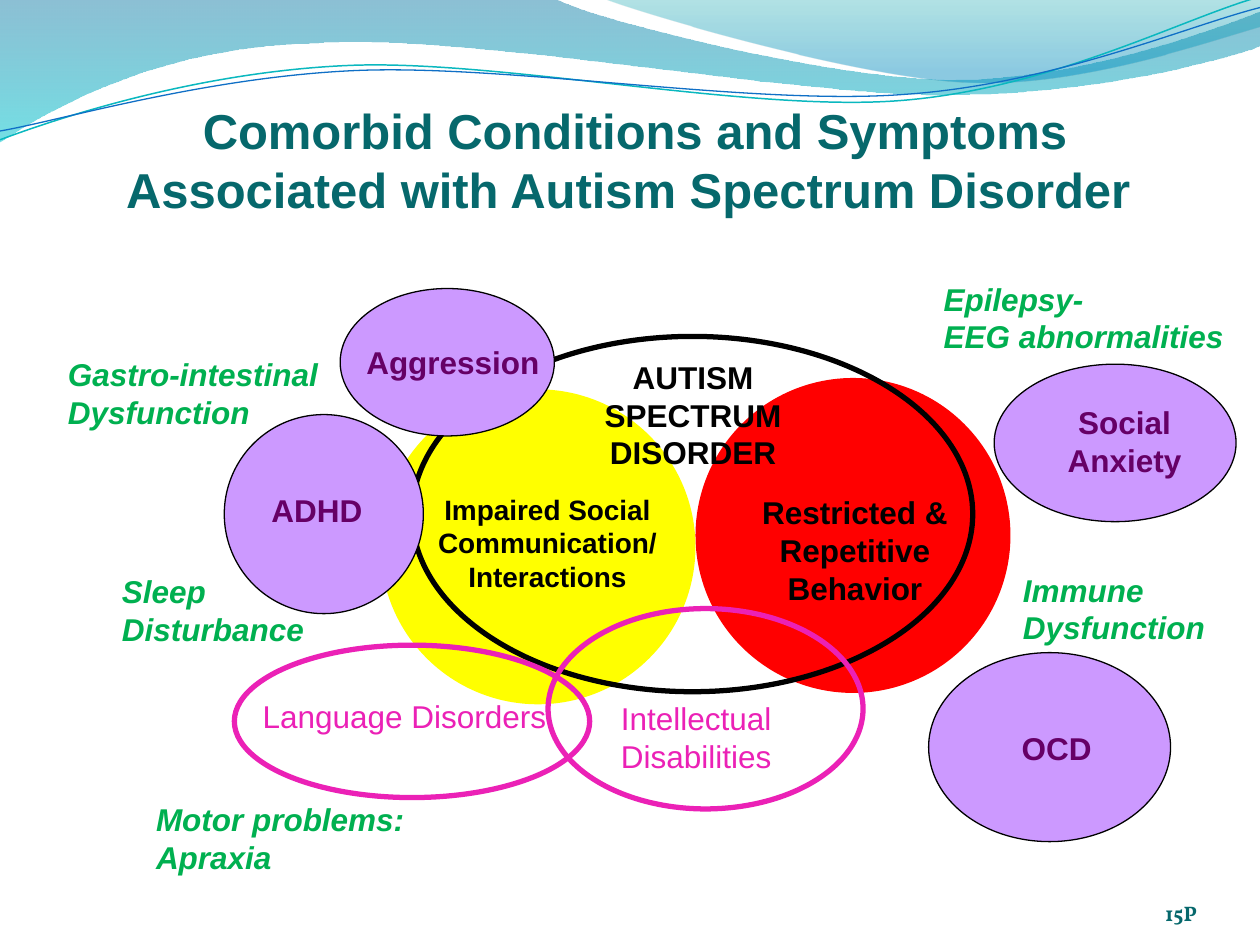
from lxml import etree
from pptx import Presentation
from pptx.dml.color import RGBColor
from pptx.enum.shapes import MSO_SHAPE
from pptx.enum.text import MSO_ANCHOR, MSO_AUTO_SIZE, PP_ALIGN
from pptx.oxml.ns import qn
from pptx.util import Inches, Pt

OVAL = MSO_SHAPE.OVAL
LEFT, CENTER, RIGHT = PP_ALIGN.LEFT, PP_ALIGN.CENTER, PP_ALIGN.RIGHT
TOP, MIDDLE, BOTTOM = MSO_ANCHOR.TOP, MSO_ANCHOR.MIDDLE, MSO_ANCHOR.BOTTOM

BLACK = RGBColor(0x00, 0x00, 0x00)
WHITE = RGBColor(0xFF, 0xFF, 0xFF)
RED = RGBColor(0xFF, 0x00, 0x00)
YELLOW = RGBColor(0xFF, 0xFF, 0x00)
PINK = RGBColor(0xEB, 0x21, 0xB6)
LILAC = RGBColor(0xCC, 0x99, 0xFF)
PURPLE = RGBColor(0x66, 0x00, 0x66)
GREEN = RGBColor(0x00, 0xB0, 0x50)
TEAL = RGBColor(0x06, 0x68, 0x6C)
DEEP_BLUE = RGBColor(0x00, 0x74, 0xA1)
AQUA = RGBColor(0x00, 0xC6, 0xCF)
SEA = RGBColor(0x00, 0xA1, 0xA9)
SKY = RGBColor(0x00, 0x8B, 0xBF)
LINE_AQUA = RGBColor(0x0A, 0xB8, 0xBF)
LINE_BLUE = RGBColor(0x0F, 0x6F, 0xC6)

# Content: a path is a start point, then points (2 numbers) or Bezier curves (6)
TITLE = ("Comorbid Conditions and Symptoms "
         "Associated with Autism Spectrum Disorder ")
WAVES = [  # path, gradient stops as (position, colour, opacity %)
    ([(0, 0), (4.4, -0.01), (4.76, 0.17, 6.64, 0.63, 7.58, 0.63),
      (8.53, 0.63, 9.58, 0.26, 10, 0.09), (10.01, 0.36),
      (9.83, 0.44, 8.7, 0.76, 7.46, 0.75), (6.22, 0.75, 3.82, 0.28, 2.57, 0.34),
      (1.29, 0.36, 0.46, 0.83, -0.01, 1.13), (0, 0)],
     [(0, DEEP_BLUE, 45), (1, AQUA, 55)]),
    ([(4.79, -0.01), (5.09, 0.11, 6.82, 0.62, 7.69, 0.65),
      (8.56, 0.69, 9.61, 0.32, 10, 0.21), (10, 0), (4.79, -0.01)],
     [(0, SEA, 30), (0.8, SKY, 45)]),
]
RIPPLES = [  # path, colour, width
    ([(0, 1.11), (0.48, 0.93, 1.58, 0.57, 2.77, 0.52),
      (3.95, 0.47, 5.93, 0.89, 7.13, 0.8), (8.33, 0.71, 9.38, 0.15, 9.98, -0.02)],
     LINE_AQUA, 0.85),
    ([(0, 1.04), (0.47, 0.96, 1.64, 0.61, 2.83, 0.56),
      (4.03, 0.51, 5.97, 0.84, 7.17, 0.75), (8.36, 0.67, 9.41, 0.21, 10, 0.06)],
     LINE_BLUE, 0.75),
]

# Formats shared by each family of labels
CORE = dict(color=BLACK, bold=True, align=CENTER)
RELATED = dict(color=PINK, align=CENTER)
COMORBID = dict(color=PURPLE, bold=True, align=CENTER)
MEDICAL = dict(color=GREEN, bold=True, italic=True)
THIN, THICK = 0.75, 3

# Back to front: (oval area, fill, line colour, line width) or (text, area, format)
DIAGRAM = [
    ("15P", (8.67, 6.95, 0.83, 0.4),
     dict(color=TEAL, bold=True, size=12, font="Vollkorn", align=RIGHT,
          anchor=BOTTOM, inset=0)),
    ((5.52, 3, 2.5, 2.5), RED, None, 0),
    ((3.02, 3.09, 2.5, 2.5), YELLOW, None, 0),
    ("Restricted & Repetitive Behavior", (5.64, 3.86, 2.29, 1.01),
     dict(CORE, anchor=MIDDLE)),
    ("Impaired Social Communication/\nInteractions", (2.97, 3.85, 2.75, 0.91),
     dict(CORE, anchor=MIDDLE, size=16)),
    ((3.27, 2.67, 4.45, 2.82), None, BLACK, THICK),
    ("AUTISM\nSPECTRUM\nDISORDER", (4.54, 2.79, 1.92, 0.96), CORE),
    ((1.86, 5.12, 2.82, 1.21), None, PINK, THICK),
    ("Language Disorders", (1.67, 5.48, 3.08, 0.91), RELATED),
    ((4.35, 4.83, 2.5, 1.59), None, PINK, THICK),
    ("Intellectual Disabilities", (4.4, 5.5, 2.25, 0.71), RELATED),
    ((1.78, 3.29, 1.58, 1.58), LILAC, BLACK, THIN),
    ("ADHD", (1.85, 3.85, 1.33, 0.4), COMORBID),
    ((7.89, 2.89, 1.92, 1.25), LILAC, BLACK, THIN),
    ("Social Anxiety", (8.09, 3.15, 1.67, 0.71), COMORBID),
    ((7.37, 5.18, 1.92, 1.5), LILAC, BLACK, THIN),
    ("OCD", (8.01, 5.74, 1.42, 0.4), dict(COMORBID, align=LEFT)),
    ((2.7, 2.29, 1.7, 1.17), LILAC, BLACK, THIN),
    ("Aggression", (2.51, 2.67, 2.17, 0.4), COMORBID),
    ("Epilepsy-\nEEG abnormalities", (7.39, 2.17, 2.61, 0.71),
     dict(MEDICAL, fill=WHITE)),
    ("Motor problems: Apraxia", (1.14, 6.3, 2.5, 0.71), MEDICAL),
    ("Immune Dysfunction", (8.02, 4.48, 1.78, 0.71), MEDICAL),
    ("Gastro-intestinal Dysfunction", (0.44, 2.77, 2.25, 0.71), MEDICAL),
    ("Sleep Disturbance", (0.87, 4.49, 1.77, 0.71), MEDICAL),
]


def write(box, text, color=BLACK, size=18, font="Arial", bold=False, italic=False,
          align=LEFT, anchor=TOP, inset=None, fill=None):
    """Put formatted text into a box, one paragraph a line."""
    frame = box.text_frame
    frame.word_wrap = True
    frame.auto_size = MSO_AUTO_SIZE.NONE
    frame.vertical_anchor = anchor
    if inset is not None:
        frame.margin_left = frame.margin_right = Inches(inset)
        frame.margin_top = frame.margin_bottom = Inches(inset)
    if fill is not None:
        box.fill.solid()
        box.fill.fore_color.rgb = fill
    for index, line in enumerate(text.split("\n")):
        para = frame.add_paragraph() if index else frame.paragraphs[0]
        para.alignment = align
        para.space_before = Pt(0)
        span = para.add_run()
        span.text = line
        span.font.name, span.font.size = font, Pt(size)
        span.font.bold, span.font.italic = bold, italic
        span.font.color.rgb = color


def style(shape, fill, line, width):
    shape.shadow.inherit = False
    if fill is None:
        shape.fill.background()
    else:
        shape.fill.solid()
        shape.fill.fore_color.rgb = fill
    if line is None:
        shape.line.fill.background()
    else:
        shape.line.color.rgb = line
        shape.line.width = Pt(width)


def draw_path(page, path, close):
    """Draw straight legs through all points, then merge threes into curves."""
    points = [(Inches(part[i]), Inches(part[i + 1]))
              for part in path for i in range(0, len(part), 2)]
    builder = page.shapes.build_freeform(*points[0])
    builder.add_line_segments(points[1:], close=close)
    shape = builder.convert_to_shape()
    legs = iter(list(shape._element.spPr.iter(qn("a:lnTo"))))
    for part in path[1:]:
        leg = next(legs)
        if len(part) == 6:
            curve = etree.Element(qn("a:cubicBezTo"))
            leg.addprevious(curve)
            for old in (leg, next(legs), next(legs)):
                curve.append(old[0])
                old.getparent().remove(old)
    return shape


def draw_wave(page, path, stops):
    shape = draw_path(page, path, True)
    style(shape, None, None, 0)
    shape.fill.gradient()
    shape.fill.gradient_angle = 270
    for stop, (position, color, _) in zip(shape.fill.gradient_stops, stops):
        stop.position = position
        stop.color.rgb = color
    colors = shape._element.spPr.find(qn("a:gradFill")).iter(qn("a:srgbClr"))
    for element, (_, _, opacity) in zip(colors, stops):
        etree.SubElement(element, qn("a:alpha")).set("val", str(opacity * 1000))


def main():
    deck = Presentation()
    deck.slide_width, deck.slide_height = Inches(10), Inches(7.5)
    page = deck.slides.add_slide(deck.slide_layouts[5])

    # Wavy header
    for path, stops in WAVES:
        draw_wave(page, path, stops)
    for path, color, width in RIPPLES:
        style(draw_path(page, path, False), None, color, width)

    # Title
    title = page.shapes.title
    title.left, title.top, title.width, title.height = map(
        Inches, (0.66, 0.75, 8.76, 1.04))
    write(title, TITLE, color=TEAL, size=28, bold=True, align=CENTER)

    # Ovals and labels
    for first, second, *rest in DIAGRAM:
        if isinstance(first, str):
            box = page.shapes.add_textbox(*map(Inches, second))
            write(box, first, **rest[0])
        else:
            oval = page.shapes.add_shape(OVAL, *map(Inches, first))
            style(oval, second, *rest)

    deck.save("out.pptx")


if __name__ == "__main__":
    main()
